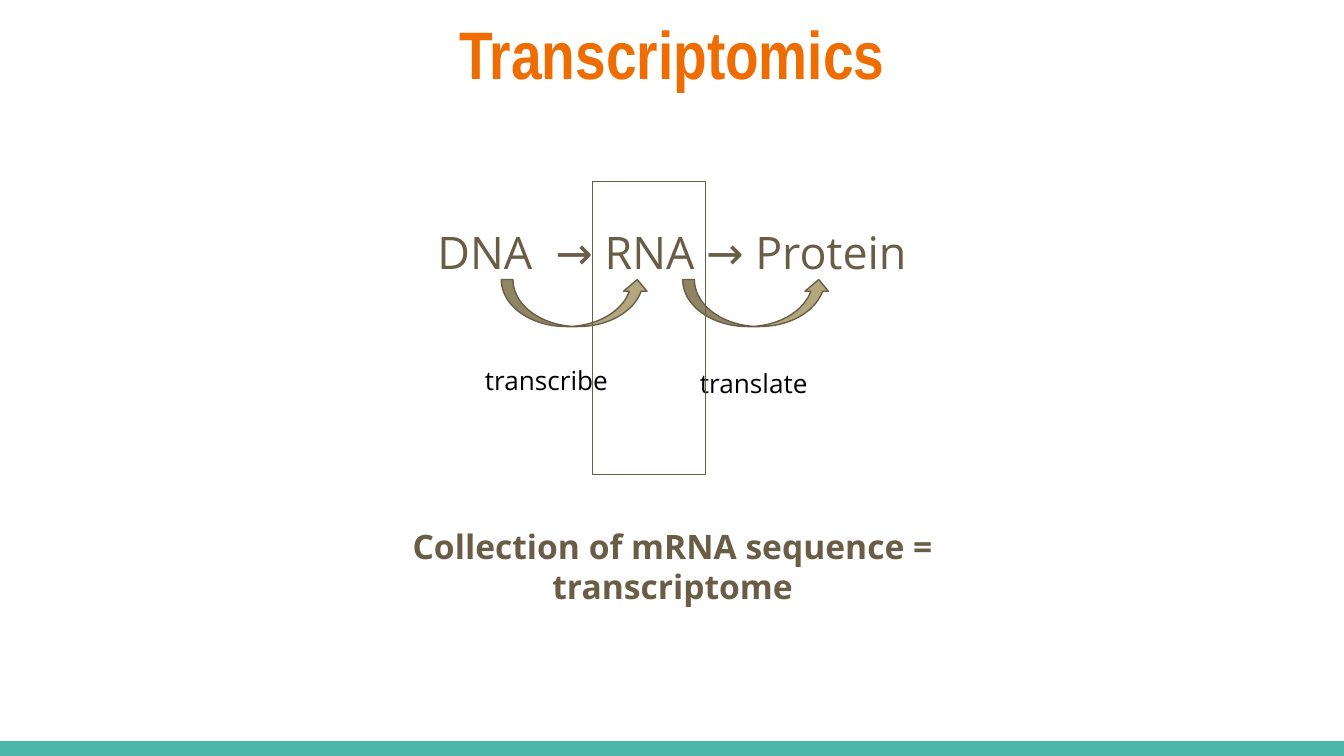
from pptx import Presentation
from pptx.dml.color import RGBColor
from pptx.enum.shapes import MSO_SHAPE
from pptx.enum.text import MSO_ANCHOR, MSO_AUTO_SIZE, PP_ALIGN
from pptx.oxml.xmlchemy import OxmlElement
from pptx.util import Inches, Pt

LEFT, CENTER = PP_ALIGN.LEFT, PP_ALIGN.CENTER
RECTANGLE, CURVED_ARROW = MSO_SHAPE.RECTANGLE, MSO_SHAPE.CURVED_UP_ARROW

WIDTH = 10
HEIGHT = WIDTH * 9 / 16
BAR_HEIGHT = 0.11
MARGIN = 0.34
CONTENT_WIDTH = WIDTH - 2 * MARGIN
ARROW_LEFT, ARROW_TOP, ARROW_STEP = 3.73, 2.08, 1.35

ORANGE, BROWN, SAND, TEAL, BLACK = "EF6C00", "695D46", "B3A77D", "4DB6AC", "000000"
BODY_FONT = "Open Sans"

TITLE = "Transcriptomics"
PATHWAY = "DNA  → RNA → Protein"
SUMMARY = "Collection of mRNA sequence = transcriptome"
STEPS = [("transcribe", 3.51, 2.61), ("translate", 5.11, 2.63)]  # label, left, top


def color(hex_string):
    return RGBColor.from_string(hex_string)


def place(shape, left, top, width, height):
    shape.left, shape.top = Inches(left), Inches(top)
    shape.width, shape.height = Inches(width), Inches(height)


def write(shape, text, size, hex_color, font=BODY_FONT, bold=False, align=CENTER):
    """Fill a shape with one formatted paragraph and return the paragraph."""
    frame = shape.text_frame
    frame.text = text
    frame.word_wrap = True
    frame.auto_size = MSO_AUTO_SIZE.NONE
    frame.vertical_anchor = MSO_ANCHOR.TOP
    frame.margin_left = frame.margin_right = Inches(0.1)
    frame.margin_top = frame.margin_bottom = Inches(0.1)
    paragraph = frame.paragraphs[0]
    paragraph.alignment = align
    run_font = paragraph.runs[0].font
    run_font.name, run_font.size, run_font.bold = font, Pt(size), bold
    run_font.color.rgb = color(hex_color)
    return paragraph


def add_label(slide, box, *args, **kwargs):
    write(slide.shapes.add_textbox(*map(Inches, box)), *args, **kwargs)


def add_shape(slide, kind, box, fill=None, line=None):
    shape = slide.shapes.add_shape(kind, *map(Inches, box))
    shape.shadow.inherit = False
    if fill:
        shape.fill.solid()
        shape.fill.fore_color.rgb = color(fill)
    else:
        shape.fill.background()
    if line:
        shape.line.color.rgb = color(line)
        shape.line.width = Pt(0.75)
    else:
        shape.line.fill.background()
    return shape


def remove_bullet(paragraph):
    properties = paragraph._p.get_or_add_pPr()
    properties.set("marL", "0")
    properties.set("indent", "0")
    properties.append(OxmlElement("a:buNone"))


presentation = Presentation()
presentation.slide_width, presentation.slide_height = Inches(WIDTH), Inches(HEIGHT)
slide = presentation.slides.add_slide(presentation.slide_layouts[1])
title, body = slide.placeholders

add_shape(slide, RECTANGLE, (0, HEIGHT - BAR_HEIGHT, WIDTH, BAR_HEIGHT), fill=TEAL)

place(title, MARGIN, -0.01, CONTENT_WIDTH, 0.77)
write(title, TITLE, 36, ORANGE, font="Arial Narrow", bold=True)

place(body, MARGIN, 1.51, CONTENT_WIDTH, 3.61)
pathway = write(body, PATHWAY, 24, BROWN)
pathway.line_spacing = 1.15
pathway.space_before, pathway.space_after = Pt(0), Pt(16)
remove_bullet(pathway)

for index, (label, left, top) in enumerate(STEPS):
    arrow_box = (ARROW_LEFT + index * ARROW_STEP, ARROW_TOP, 1.1, 0.35)
    arrow = add_shape(slide, CURVED_ARROW, arrow_box, fill=SAND, line=BROWN)
    for position, value in enumerate((0.25, 0.5, 0.25)):
        arrow.adjustments[position] = value
    add_label(slide, (left, top, 1.21, 0.35), label, 14, BLACK, align=LEFT)

add_shape(slide, RECTANGLE, (4.41, 1.35, 0.84, 2.18), line=BROWN)
add_label(slide, (2.76, 3.81, 4.49, 0.77), SUMMARY, 18, BROWN, bold=True)

presentation.save("out.pptx")
